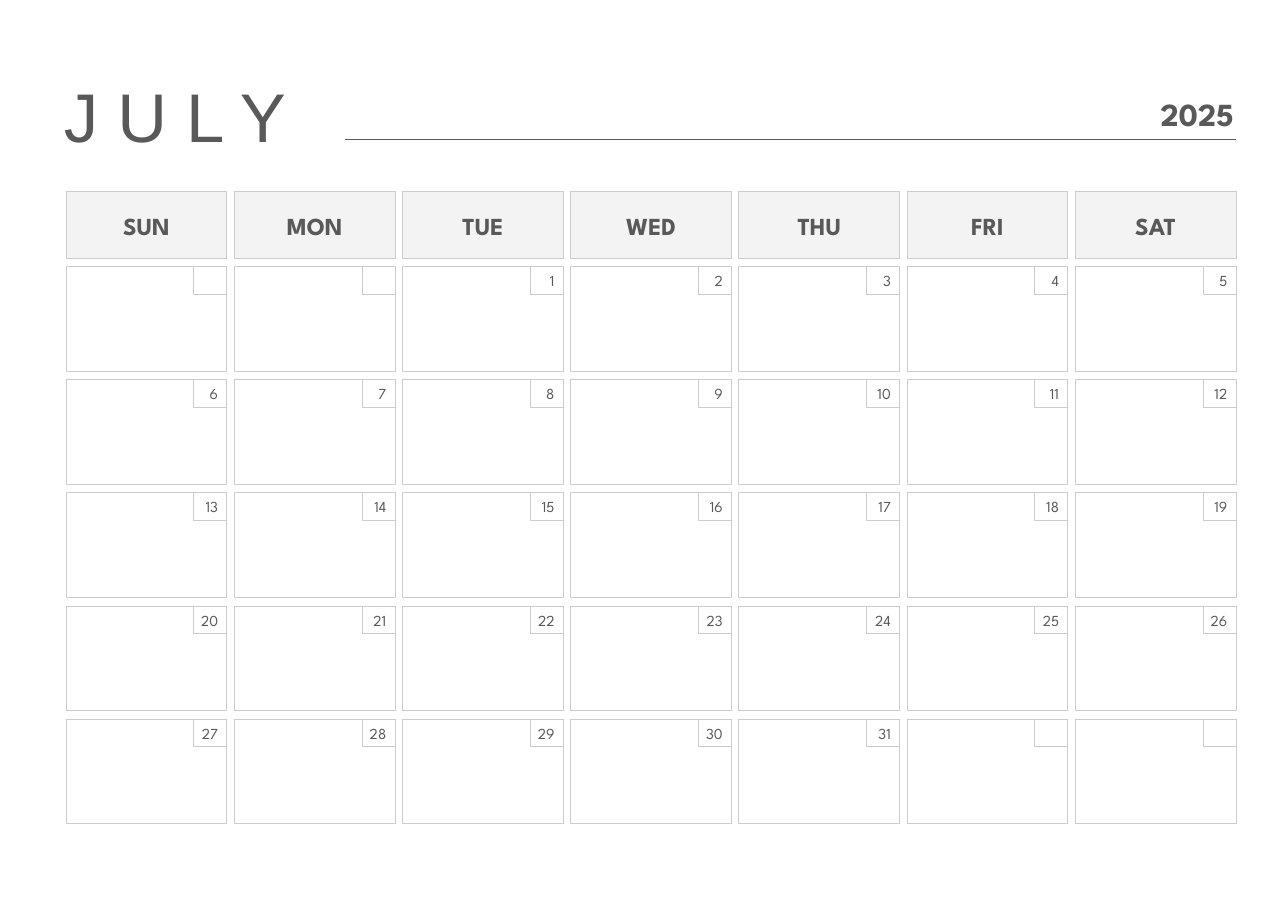
from dataclasses import dataclass

from lxml.etree import SubElement
from pptx import Presentation
from pptx.dml.color import RGBColor
from pptx.enum.shapes import MSO_CONNECTOR, MSO_SHAPE
from pptx.enum.text import MSO_ANCHOR, MSO_AUTO_SIZE, PP_ALIGN
from pptx.oxml.ns import qn
from pptx.util import Inches, Pt


@dataclass(frozen=True)
class Theme:
    ink: str = "595959"
    rule: str = "CCCCCC"
    header: str = "F3F3F3"
    paper: str = "FFFFFF"
    title_font: str = "Arial"
    font: str = "League Spartan"
    title_size: int = 45
    year_size: int = 21
    weekday_size: int = 16
    date_size: int = 10
    line: float = 0.75


class CalendarSlide:
    def __init__(self, prs, theme):
        self.theme = theme
        self.slide = prs.slides.add_slide(prs.slide_layouts[5])
        self.shapes = self.slide.shapes

    def group(self):
        return self.shapes.add_group_shape().shapes

    def text(self, sp, text, size, align, font=None, bold=False,
             insets=(0, 0, 0, 0), anchor=MSO_ANCHOR.MIDDLE):
        tf = sp.text_frame
        tf.word_wrap = True
        tf.auto_size = MSO_AUTO_SIZE.NONE
        tf.vertical_anchor = anchor
        tf.margin_left, tf.margin_top, tf.margin_right, tf.margin_bottom = map(Inches, insets)
        p = tf.paragraphs[0]
        p.alignment = align
        r = p.add_run()
        r.text = text
        r.font.name = font or self.theme.font
        r.font.size = Pt(size)
        r.font.bold = bold
        r.font.color.rgb = RGBColor.from_string(self.theme.ink)

    def title(self, text, x, y, w, h):
        sp = self.shapes.title
        sp.left, sp.top, sp.width, sp.height = map(Inches, (x, y, w, h))
        self.text(sp, text, self.theme.title_size, PP_ALIGN.LEFT,
                  font=self.theme.title_font, anchor=MSO_ANCHOR.BOTTOM)

    def box(self, shapes, x, y, w, h, fill=None, line=None, kind=MSO_SHAPE.RECTANGLE):
        sp = shapes.add_shape(kind, *map(Inches, (x, y, w, h)))
        sp.shadow.inherit = False
        if fill:
            sp.fill.solid()
            sp.fill.fore_color.rgb = RGBColor.from_string(fill)
        else:
            sp.fill.background()
        if line:
            sp.line.color.rgb = RGBColor.from_string(line)
            sp.line.width = Pt(self.theme.line)
        else:
            sp.line.fill.background()
        return sp

    def rule(self, x1, x2, y):
        cx = self.shapes.add_connector(MSO_CONNECTOR.STRAIGHT, *map(Inches, (x1, y, x2, y)))
        cx.line.color.rgb = RGBColor.from_string(self.theme.ink)
        cx.line.width = Pt(self.theme.line)
        SubElement(cx._element.spPr, qn("a:effectLst"))


LEFT, RIGHT = 0.6, 11.22
CELL_W, CELL_H = 1.46, 0.95
HEADER_Y, HEADER_H = 1.74, 0.61
WEEKS_Y, LAST_WEEK_Y, WEEKS = 2.42, 6.53, 5
TAG_W, TAG_H = 0.3, 0.25
WEEKDAYS = ["SUN", "MON", "TUE", "WED", "THU", "FRI", "SAT"]
FIRST_WEEKDAY, DAYS = 2, 31


def main():
    theme = Theme()
    prs = Presentation()
    prs.slide_width, prs.slide_height = Inches(11.69), Inches(8.27)
    s = CalendarSlide(prs, theme)

    s.title("J U L Y", 0.58, 0.66, 2.59, 0.76)
    year = s.box(s.shapes, 10, 0.79, 1.22, 0.48, kind=MSO_SHAPE.ROUNDED_RECTANGLE)
    s.text(year, "2025", theme.year_size, PP_ALIGN.RIGHT, bold=True)

    step_x = (RIGHT - CELL_W - LEFT) / (len(WEEKDAYS) - 1)
    step_y = (LAST_WEEK_Y - WEEKS_Y) / (WEEKS - 1)
    columns = [LEFT + i * step_x for i in range(len(WEEKDAYS))]
    rows = [WEEKS_Y + i * step_y for i in range(WEEKS)]
    slots = [(x, y) for y in rows for x in columns]

    cells = s.group()
    for x, name in zip(columns, WEEKDAYS):
        sp = s.box(cells, x, HEADER_Y, CELL_W, HEADER_H, theme.header, theme.rule)
        s.text(sp, name, theme.weekday_size, PP_ALIGN.CENTER, bold=True, insets=(0.1,) * 4)
    for x, y in slots:
        s.box(cells, x, y, CELL_W, CELL_H, theme.paper, theme.rule)

    tags = s.group()
    for day, (x, y) in enumerate(slots, 1 - FIRST_WEEKDAY):
        sp = s.box(tags, x + CELL_W - TAG_W, y, TAG_W, TAG_H, line=theme.rule)
        if 1 <= day <= DAYS:
            s.text(sp, str(day), theme.date_size, PP_ALIGN.RIGHT, insets=(0, 0.04, 0.08, 0.04))

    s.rule(3.13, RIGHT, 1.27)
    prs.save("out.pptx")


if __name__ == "__main__":
    main()
